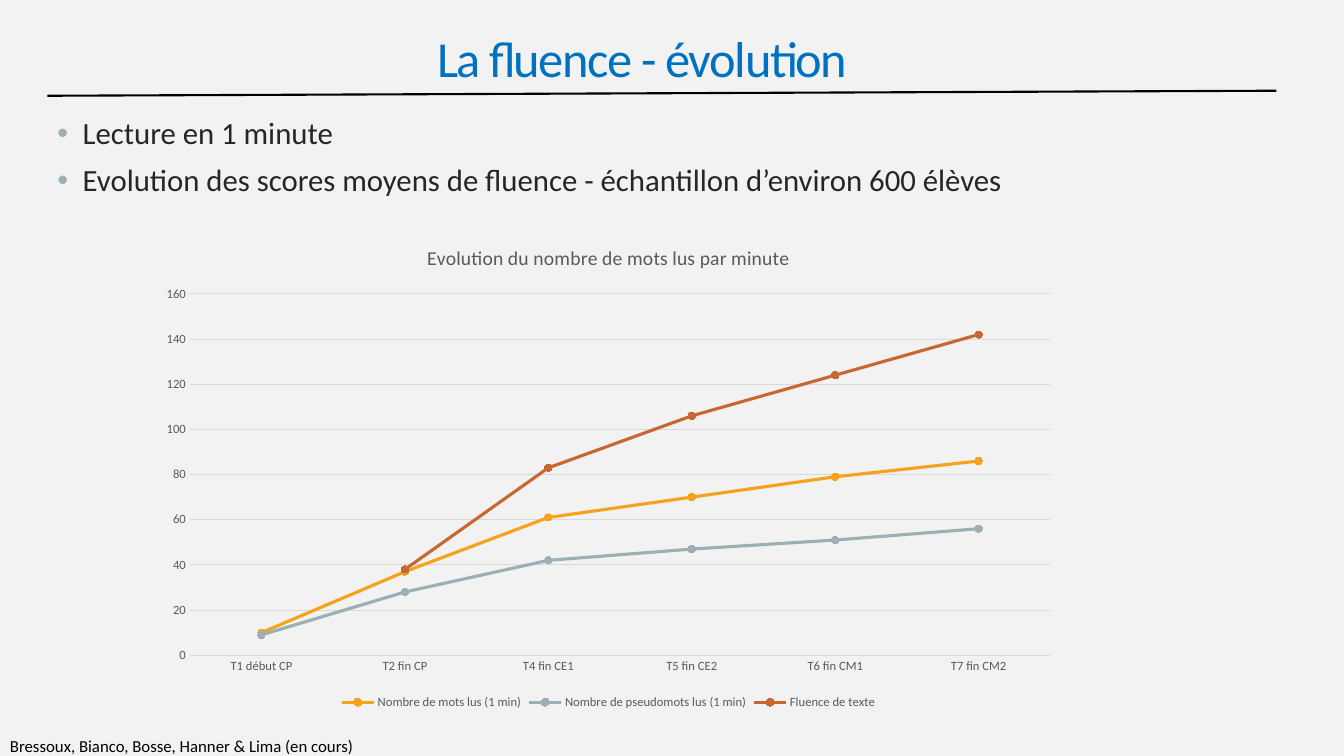
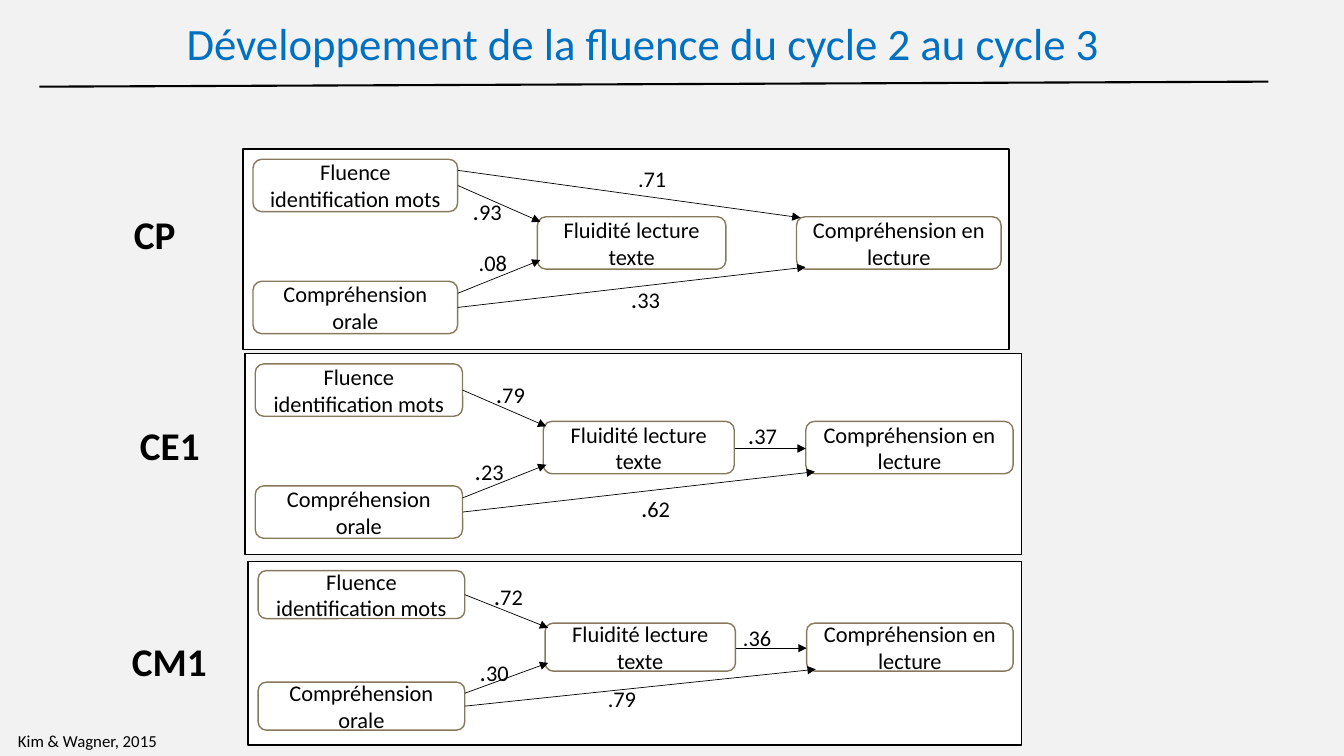
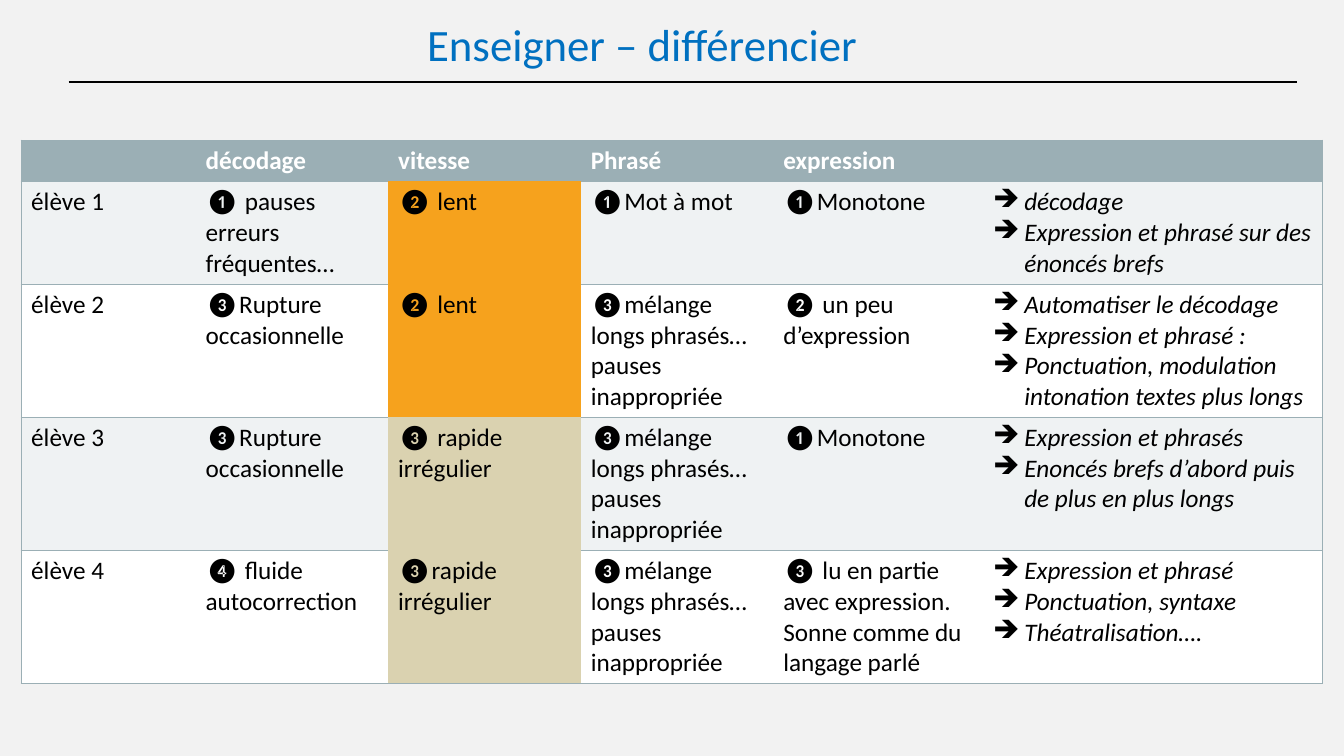
from dataclasses import dataclass

from lxml import etree
from pptx import Presentation
from pptx.chart.data import CategoryChartData
from pptx.dml.color import RGBColor
from pptx.enum.chart import XL_CHART_TYPE, XL_LEGEND_POSITION, XL_MARKER_STYLE, XL_TICK_MARK
from pptx.enum.shapes import MSO_CONNECTOR, MSO_SHAPE
from pptx.enum.text import MSO_ANCHOR, MSO_AUTO_SIZE, PP_ALIGN
from pptx.oxml.ns import qn
from pptx.util import Inches, Pt

RECTANGLE = MSO_SHAPE.RECTANGLE
ROUNDED = MSO_SHAPE.ROUNDED_RECTANGLE
STRAIGHT = MSO_CONNECTOR.STRAIGHT
LINE_MARKERS = XL_CHART_TYPE.LINE_MARKERS
LEGEND_BOTTOM = XL_LEGEND_POSITION.BOTTOM
CIRCLE = XL_MARKER_STYLE.CIRCLE
NO_TICK = XL_TICK_MARK.NONE
CENTER = PP_ALIGN.CENTER
TOP, MIDDLE = MSO_ANCHOR.TOP, MSO_ANCHOR.MIDDLE
NO_AUTOFIT, GROW = MSO_AUTO_SIZE.NONE, MSO_AUTO_SIZE.SHAPE_TO_FIT_TEXT
LAYOUT_CONTENT, LAYOUT_TITLE = 1, 5


@dataclass(frozen=True)
class Theme:
    font: str = "Calibri"
    background: str = "F2F2F2"
    title: str = "0070C0"
    body: str = "262626"
    ink: str = "000000"
    white: str = "FFFFFF"
    box_line: str = "87795D"
    accent: str = "9BAFB5"
    orange: str = "F6A21D"
    rust: str = "C96731"
    sand: str = "DAD2B0"
    band: str = "EFF2F3"
    chart_text: str = "595959"
    grid: str = "D9D9D9"
    large_title_size: int = 36
    title_size: int = 32
    grade_size: int = 28
    body_size: int = 22
    table_size: int = 18
    dot_size: int = 18
    label_size: int = 16
    chart_title_size: int = 14
    source_size: int = 12
    axis_size: int = 9


THEME = Theme()


def rgb(color):
    return RGBColor.from_string(color)


def inches(*lengths):
    return [Inches(length) for length in lengths]


def set_attributes(target, **values):
    for name, value in values.items():
        setattr(target, name, value)


def format_font(font, size, color, **values):
    """Apply the theme font and any further font attributes."""
    set_attributes(font, name=THEME.font, size=Pt(size), **values)
    font.color.rgb = rgb(color)


def add_bullet(paragraph, character, indent, color=None):
    properties = paragraph._p.get_or_add_pPr()
    properties.set("marL", str(Inches(indent)))
    properties.set("indent", str(-Inches(indent)))
    if color:
        holder = etree.SubElement(properties, qn("a:buClr"))
        etree.SubElement(holder, qn("a:srgbClr"), val=color)
    etree.SubElement(properties, qn("a:buChar"), char=character)


def set_borders(cell, colors):
    """Draw the left, right, top and bottom borders; None hides one."""
    properties = cell._tc.get_or_add_tcPr()
    for side, color in zip(("lnL", "lnR", "lnT", "lnB"), colors):
        line = etree.SubElement(properties, qn(f"a:{side}"), w=str(Pt(1)))
        if color:
            fill = etree.SubElement(line, qn("a:solidFill"))
            etree.SubElement(fill, qn("a:srgbClr"), val=color)
        else:
            etree.SubElement(line, qn("a:noFill"))


class Deck:
    """Holds the presentation, its style and the current slide."""

    def __init__(self):
        self.presentation = Presentation()
        self.presentation.slide_width, self.presentation.slide_height = inches(13.33, 7.5)
        fill = self.presentation.slide_master.background.fill
        fill.solid()
        fill.fore_color.rgb = rgb(THEME.background)
        self.slide = None

    def new_slide(self, title, box, rule, layout=LAYOUT_TITLE, anchor=TOP,
                  size=THEME.title_size, tracking=0, line_spacing=0.9):
        self.slide = self.presentation.slides.add_slide(
            self.presentation.slide_layouts[layout])
        frame = self.place(self.slide.shapes.title, box, anchor)
        paragraph = frame.paragraphs[0]
        set_attributes(paragraph, alignment=CENTER, line_spacing=line_spacing,
                       space_before=Pt(10))
        run = self.run(paragraph, title, size, THEME.title)
        if tracking:
            run.font._element.set("spc", str(tracking * 100))
        self.line(*rule, width=1.5)

    def place(self, placeholder, box, anchor):
        bounds = zip(("left", "top", "width", "height"), inches(*box))
        set_attributes(placeholder, **dict(bounds))
        frame = placeholder.text_frame
        frame.auto_size = NO_AUTOFIT
        frame.vertical_anchor = anchor
        return frame

    def run(self, paragraph, text, size, color=THEME.ink, **values):
        run = paragraph.add_run()
        run.text = text
        format_font(run.font, size, color, **values)
        return run

    def bullets(self, items, box):
        frame = self.place(self.slide.placeholders[1], box, TOP)
        for index, item in enumerate(items):
            paragraph = frame.add_paragraph() if index else frame.paragraphs[0]
            set_attributes(paragraph, line_spacing=0.9, space_before=Pt(10))
            add_bullet(paragraph, "•", 0.25, THEME.accent)
            self.run(paragraph, item, THEME.body_size, THEME.body)

    def text(self, runs, box, **values):
        """Add an unwrapped text box from (text, size) runs."""
        frame = self.slide.shapes.add_textbox(*inches(*box)).text_frame
        frame.word_wrap = False
        frame.auto_size = GROW
        for text, size in runs:
            self.run(frame.paragraphs[0], text, size, **values)

    def source(self, text, box):
        self.text([(text, THEME.source_size)], box)

    def box(self, kind, box, line_color, text=None):
        shape = self.slide.shapes.add_shape(kind, *inches(*box))
        shape.shadow.inherit = False
        shape.fill.solid()
        shape.fill.fore_color.rgb = rgb(THEME.white)
        shape.line.color.rgb = rgb(line_color)
        shape.line.width = Pt(1)
        if text:
            frame = shape.text_frame
            frame.word_wrap = True
            frame.vertical_anchor = MIDDLE
            frame.paragraphs[0].alignment = CENTER
            self.run(frame.paragraphs[0], text, THEME.label_size)

    def line(self, start, end, width=0.5, arrow=False):
        connector = self.slide.shapes.add_connector(STRAIGHT, *inches(*start, *end))
        connector.line.color.rgb = rgb(THEME.ink)
        connector.line.width = Pt(width)
        properties = connector._element.spPr
        if arrow:
            etree.SubElement(properties.find(qn("a:ln")), qn("a:tailEnd"), type="triangle")
        etree.SubElement(properties, qn("a:effectLst"))

    def line_chart(self, title, categories, series, box):
        """Add a marker chart from (name, color, values) series."""
        data = CategoryChartData()
        data.categories = categories
        for name, _, values in series:
            data.add_series(name, values)
        chart = self.slide.shapes.add_chart(LINE_MARKERS, *inches(*box), data).chart
        format_font(chart.font, THEME.axis_size, THEME.chart_text)

        # Title and legend
        chart.has_title = True
        self.run(chart.chart_title.text_frame.paragraphs[0], title,
                 THEME.chart_title_size, THEME.chart_text, bold=False)
        chart.chart_title.include_in_layout = False
        chart.has_legend = True
        chart.legend.position = LEGEND_BOTTOM
        chart.legend.include_in_layout = False

        # Axes
        value_axis, category_axis = chart.value_axis, chart.category_axis
        for axis in (value_axis, category_axis):
            axis.major_tick_mark = axis.minor_tick_mark = NO_TICK
        set_attributes(value_axis, minimum_scale=0, maximum_scale=160, major_unit=20)
        value_axis.format.line.fill.background()
        for line in (category_axis.format.line, value_axis.major_gridlines.format.line):
            line.color.rgb = rgb(THEME.grid)
            line.width = Pt(0.75)

        # Series
        plot = chart.plots[0]
        plot.vary_by_categories = False
        for curve, (_, color, _) in zip(plot.series, series):
            curve.smooth = False
            curve.format.line.color.rgb = rgb(color)
            curve.format.line.width = Pt(2.25)
            curve.marker.style = CIRCLE
            curve.marker.size = 5
            curve.marker.format.fill.solid()
            curve.marker.format.fill.fore_color.rgb = rgb(color)
            curve.marker.format.line.color.rgb = rgb(color)

    def table(self, rows, column_widths, row_heights, origin, fills):
        """Add a table; fills gives special colours by (row, column)."""
        size = (sum(column_widths), sum(row_heights))
        table = self.slide.shapes.add_table(
            len(rows), len(column_widths), *inches(*origin, *size)).table
        for column, width in zip(table.columns, column_widths):
            column.width = Inches(width)
        for row, height in zip(table.rows, row_heights):
            row.height = Inches(height)
        last = len(column_widths) - 1
        for row_index, row in enumerate(rows):
            band = THEME.band if row_index % 2 else THEME.white
            base = band if row_index else THEME.accent
            for column_index, content in enumerate(row):
                cell = table.cell(row_index, column_index)
                special = fills.get((row_index, column_index))
                edge = THEME.accent
                bottom = edge if not special or row_index == len(rows) - 1 else special
                set_borders(cell, (edge if column_index == 0 else None,
                                   edge if column_index == last else None,
                                   special or edge, bottom))
                cell.fill.solid()
                cell.fill.fore_color.rgb = rgb(special or base)
                self.fill_cell(cell, content, row_index == 0,
                               row_index > 0 and column_index == last)

    def fill_cell(self, cell, content, header, advice):
        color = THEME.white if header else THEME.ink
        frame = cell.text_frame
        for index, text in enumerate(content.split("\n")):
            paragraph = frame.add_paragraph() if index else frame.paragraphs[0]
            if advice:
                add_bullet(paragraph, "➔", 0.31)
            if text:
                self.run(paragraph, text, THEME.table_size, color,
                         bold=header, italic=advice)


# Path diagram, laid out on a panel of this size and scaled to each one
PANEL_WIDTH, PANEL_HEIGHT = 7.6, 1.99
NODES = [
    ("Fluence identification mots", (0.1, 0.1, 2.03, 0.52)),
    ("Compréhension orale", (0.1, 1.31, 2.03, 0.52)),
    ("Fluidité lecture texte", (2.92, 0.67, 1.87, 0.52)),
    ("Compréhension en lecture", (5.49, 0.67, 2.03, 0.52)),
]
SHARED_ARROWS = [
    ((2.13, 0.36), (2.95, 0.72)),
    ((2.13, 1.43), (2.95, 1.1)),
    ((2.13, 1.57), (5.58, 1.17)),
]
WORDS_TO_READING = ((2.13, 0.21), (5.53, 0.68))
TEXT_TO_READING = ((4.8, 0.94), (5.49, 0.94))

# Grade, its box, panel, extra arrow, coefficients (text, left, top, large dot)
PANELS = [
    ("CP", (1.23, 2.04, 0.63, 0.58), (2.41, 1.48, 7.6, 1.99), WORDS_TO_READING,
     [("71", 6.23, 1.59, False), ("33", 6.16, 2.76, True),
      ("93", 4.59, 1.89, True), ("08", 4.65, 2.42, False)]),
    ("CE1", (1.29, 4.13, 0.83, 0.58), (2.43, 3.51, 7.7, 1.99), TEXT_TO_READING,
     [("37", 7.32, 4.11, True), ("62", 6.26, 4.83, True),
      ("23", 4.61, 4.47, True), ("79", 4.82, 3.7, True)]),
    ("CM1", (1.21, 6.27, 0.98, 0.58), (2.46, 5.57, 7.67, 1.82), TEXT_TO_READING,
     [("30", 4.66, 6.46, True), ("72", 4.8, 5.71, True),
      ("36", 7.27, 6.14, False), ("79", 5.93, 6.75, False)]),
]


def draw_panel(deck, grade, grade_box, panel, extra_arrow, coefficients):
    left, top, width, height = panel
    scale_x, scale_y = width / PANEL_WIDTH, height / PANEL_HEIGHT

    def at(point):
        return left + point[0] * scale_x, top + point[1] * scale_y

    deck.text([(grade, THEME.grade_size)], grade_box, bold=True)
    deck.box(RECTANGLE, panel, THEME.ink)
    for text, (x, y, node_width, node_height) in NODES:
        bounds = (*at((x, y)), node_width * scale_x, node_height * scale_y)
        deck.box(ROUNDED, bounds, THEME.box_line, text)
    for start, end in [*SHARED_ARROWS, extra_arrow]:
        deck.line(at(start), at(end), arrow=True)
    for digits, x, y, large_dot in coefficients:
        dot_size = THEME.dot_size if large_dot else THEME.label_size
        deck.text([(".", dot_size), (digits, THEME.label_size)], (x, y, 0.5, 0.41))


def fluency_slide(deck):
    deck.new_slide("La fluence - évolution", (0.37, 0.03, 12, 1.08),
                   ((0.47, 0.95), (12.66, 0.9)), layout=LAYOUT_CONTENT, anchor=MIDDLE,
                   size=THEME.large_title_size, tracking=-1, line_spacing=1.0)
    deck.bullets(["Lecture en 1 minute",
                  "Evolution des scores moyens de fluence - échantillon d’environ 600 élèves"],
                 (0.47, 1.12, 11.5, 0.97))
    deck.source("Bressoux, Bianco, Bosse, Hanner & Lima (en cours)", (0, 7.25, 3.65, 0.3))
    deck.line_chart(
        "Evolution du nombre de mots lus par minute",
        ["T1 début CP", "T2 fin CP", "T4 fin CE1", "T5 fin CE2", "T6 fin CM1", "T7 fin CM2"],
        [("Nombre de mots lus (1 min)", THEME.orange, (10, 37, 61, 70, 79, 86)),
         ("Nombre de pseudomots lus (1 min)", THEME.accent, (9, 28, 42, 47, 51, 56)),
         ("Fluence de texte", THEME.rust, (None, 38, 83, 106, 124, 142))],
        (1.47, 2.24, 9.13, 4.84))


def development_slide(deck):
    deck.new_slide("Développement de la fluence du cycle 2 au cycle 3",
                   (0.75, 0.17, 11.26, 0.85), ((0.39, 0.86), (12.58, 0.81)))
    deck.source("Kim & Wagner, 2015", (0.08, 7.2, 1.58, 0.3))
    for panel in PANELS:
        draw_panel(deck, *panel)


def teaching_slide(deck):
    deck.new_slide("Enseigner – différencier", (0.74, 0.18, 11.26, 0.85),
                   ((0.68, 0.81), (12.86, 0.81)))
    decoding = "❸Rupture occasionnelle"
    phrasing = "❸mélange longs phrasés… pauses inappropriée"
    rows = [
        ("", "décodage", "vitesse", "Phrasé", "expression", ""),
        ("élève 1", "❶ pauses erreurs fréquentes…", "❷ lent", "❶Mot à mot", "❶Monotone",
         "décodage\nExpression et phrasé sur des énoncés brefs"),
        ("élève 2", decoding, "❷ lent", phrasing, "❷ un peu d’expression",
         "Automatiser le décodage\nExpression et phrasé :\n"
         "Ponctuation, modulation intonation textes plus longs"),
        ("élève 3", decoding, "❸ rapide irrégulier", phrasing, "❶Monotone",
         "Expression et phrasés\nEnoncés brefs d’abord puis de plus en plus longs"),
        ("élève 4", "❹ fluide autocorrection", "❸rapide irrégulier", phrasing,
         "❸ lu en partie avec expression.\nSonne comme du langage parlé",
         "Expression et phrasé\nPonctuation, syntaxe\nThéatralisation…."),
    ]
    speed_fills = {(1, 2): THEME.orange, (2, 2): THEME.orange,
                   (3, 2): THEME.sand, (4, 2): THEME.sand}
    deck.table(rows, [1.73, 1.91, 1.91, 1.91, 2.08, 3.37],
               [0.41, 1.02, 1.32, 1.32, 1.32], (0.21, 1.39), speed_fills)


def main():
    deck = Deck()
    fluency_slide(deck)
    development_slide(deck)
    teaching_slide(deck)
    deck.presentation.save("out.pptx")


if __name__ == "__main__":
    main()
